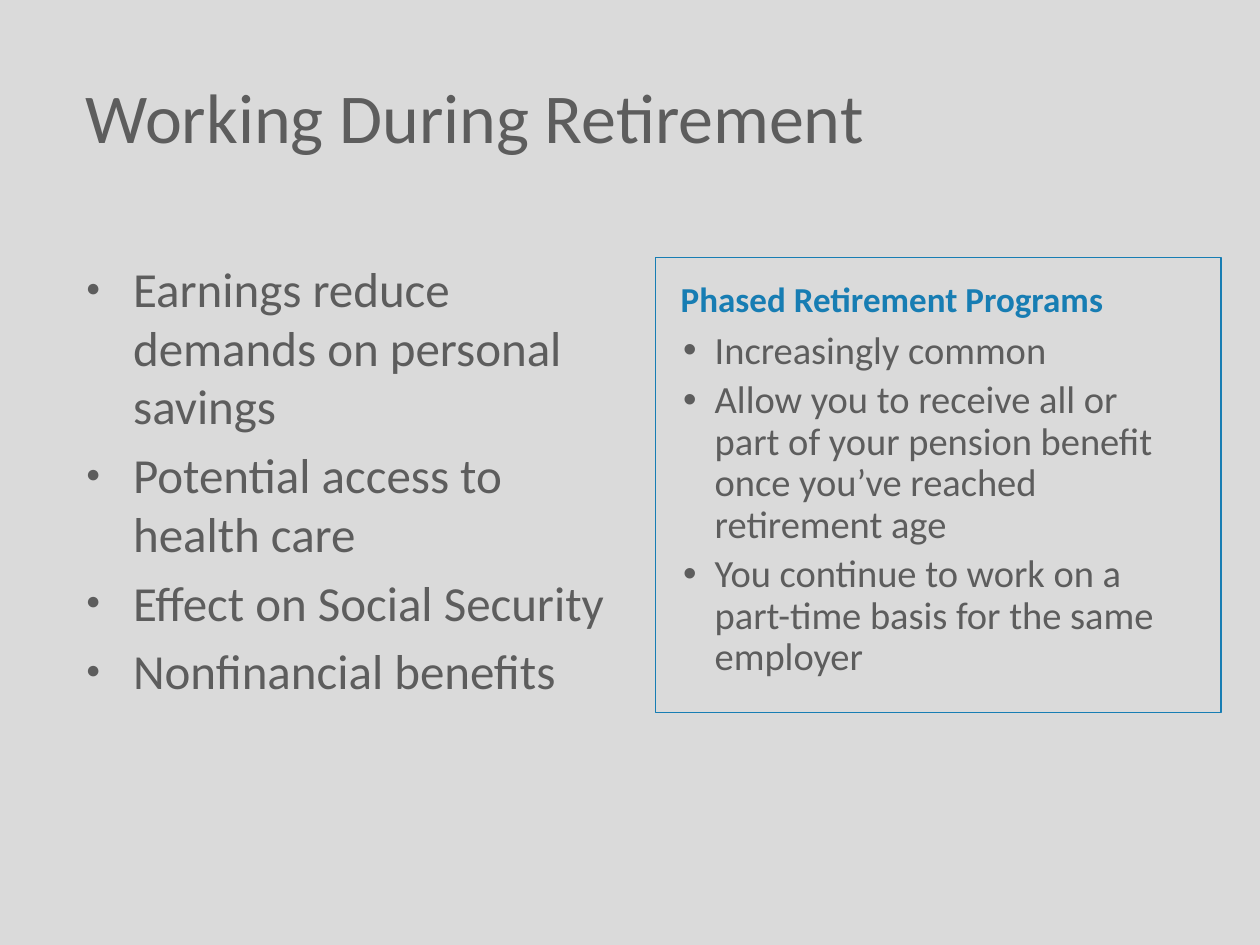
"""Build the slide on working during retirement."""
import pptx
import pptx.dml.color
import pptx.enum.shapes
import pptx.enum.text
import pptx.oxml.ns
import pptx.util
from lxml import etree

Pt = pptx.util.Pt
ANCHOR = pptx.enum.text.MSO_ANCHOR
GRAY = "5D5D5D"
BLUE = "177DB3"
BENEFITS = [
    "Earnings reduce demands on personal savings",
    "Potential access to health care",
    "Effect on Social Security",
    "Nonfinancial benefits",
]
PROGRAM_FACTS = [
    "Increasingly common",
    "Allow you to receive all or part of your pension benefit once you’ve reached retirement age",
    "You continue to work on a part-time basis for the same employer",
]


def color(hex_string):
    """Return the color for a hex string."""
    return pptx.dml.color.RGBColor.from_string(hex_string)


def add_bullet(paragraph, character, percent, indent):
    """Give a paragraph a hanging bullet, with its indent in points."""
    properties = paragraph._p.get_or_add_pPr()
    properties.set("marL", str(Pt(indent)))
    properties.set("indent", str(-Pt(indent)))
    qn = pptx.oxml.ns.qn
    bullet_color = etree.SubElement(properties, qn("a:buClr"))
    etree.SubElement(bullet_color, qn("a:srgbClr"), val=GRAY)
    etree.SubElement(properties, qn("a:buSzPct"), val=str(percent * 1000))
    etree.SubElement(properties, qn("a:buFont"), typeface="Arial")
    etree.SubElement(properties, qn("a:buChar"), char=character)


def add_text(slide, box, lines, size, font_color=GRAY, bold=False, bullet=None,
             anchor=ANCHOR.TOP, margins=(7.2, 3.6, 7.2, 3.6),
             line_spacing=1.0, before=0, after=0):
    """Add a text box with one paragraph per line."""
    shape = slide.shapes.add_textbox(*map(Pt, box))
    frame = shape.text_frame
    frame.word_wrap = True
    frame.vertical_anchor = anchor
    (frame.margin_left, frame.margin_top,
     frame.margin_right, frame.margin_bottom) = map(Pt, margins)
    frame.text = "\n".join(lines)
    for index, paragraph in enumerate(frame.paragraphs):
        if bullet:
            add_bullet(paragraph, *bullet)
        paragraph.line_spacing = line_spacing
        paragraph.space_before = Pt(before if index else 0)
        paragraph.space_after = Pt(after)
        paragraph.font.name = "Calibri"
        paragraph.font.size = Pt(size)
        paragraph.font.bold = bold
        paragraph.font.color.rgb = color(font_color)


def add_frame(slide, box):
    """Add an unfilled rectangle with a thin blue outline."""
    shape = slide.shapes.add_shape(
        pptx.enum.shapes.MSO_SHAPE.RECTANGLE, *map(Pt, box))
    shape.shadow.inherit = False
    shape.fill.background()
    shape.line.color.rgb = color(BLUE)
    shape.line.width = Pt(0.75)


def main():
    """Build and save the presentation."""
    presentation = pptx.Presentation()
    presentation.slide_width = Pt(720)
    presentation.slide_height = Pt(540)
    slide = presentation.slides.add_slide(presentation.slide_layouts[6])
    slide.background.fill.solid()
    slide.background.fill.fore_color.rgb = color("DADADA")

    add_text(slide, (42, 42, 678, 47.5), ["Working During Retirement"], 40,
             anchor=ANCHOR.MIDDLE)
    add_text(slide, (42, 144, 318, 356), BENEFITS, 28,
             bullet=("●", 50, 27), before=5.6)
    add_text(slide, (383, 150, 295, 44), ["Phased Retirement Programs"], 20,
             font_color=BLUE, bold=True, anchor=ANCHOR.MIDDLE,
             margins=(6, 6, 6, 6), line_spacing=0.9, after=7)
    add_text(slide, (381, 187, 300, 307.5), PROGRAM_FACTS, 22,
             bullet=("•", 100, 18), margins=(9.4, 2.2, 12.2, 2.2),
             line_spacing=0.9, after=4.4)
    add_frame(slide, (374.4, 147, 323.3, 260))
    presentation.save("out.pptx")


if __name__ == "__main__":
    main()
